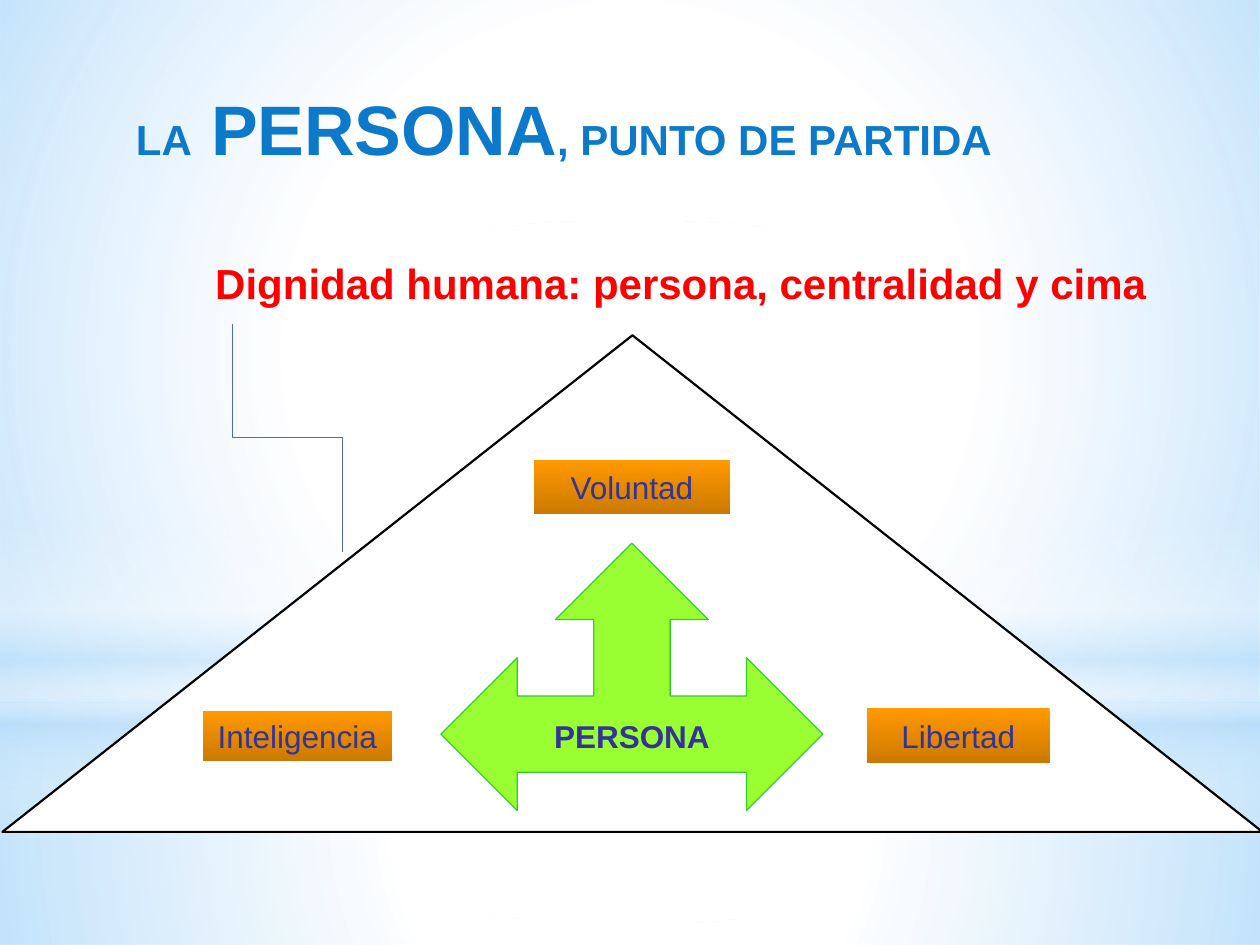
from typing import NamedTuple

from lxml.etree import SubElement
from pptx import Presentation
from pptx.dml.color import RGBColor
from pptx.enum.shapes import MSO_CONNECTOR as Connector, MSO_SHAPE as Preset
from pptx.enum.text import MSO_ANCHOR as Anchor, PP_ALIGN as Align
from pptx.oxml.ns import qn
from pptx.util import Cm, Pt

WHITE = RGBColor(0xFF, 0xFF, 0xFF)
BLACK = RGBColor(0x00, 0x00, 0x00)
SKY = RGBColor(0xB4, 0xDC, 0xFA)
ORANGE = RGBColor(0xFF, 0x99, 0x00)
DARK_ORANGE = RGBColor(0xCC, 0x79, 0x00)
LIME = RGBColor(0x99, 0xFF, 0x33)
GREEN = RGBColor(0x33, 0xCC, 0x33)
INDIGO = RGBColor(0x33, 0x33, 0x99)
BLUE = RGBColor(0x0D, 0x79, 0xCA)
RED = RGBColor(0xFF, 0x00, 0x00)
CONNECTOR_BLUE = RGBColor(0x4E, 0x67, 0xC8)
FONT = "Arial"


class Box(NamedTuple):
    left: float
    top: float
    width: float
    height: float

    def lengths(self) -> tuple:
        return tuple(Cm(value) for value in self)


class Stop(NamedTuple):
    position: int
    color: RGBColor
    opacity: int = 100


class Glow(NamedTuple):
    preset: Preset
    box: Box
    stops: tuple
    radial: bool = True


class Label(NamedTuple):
    text: str
    box: Box


class Piece(NamedTuple):
    text: str
    size: int
    color: RGBColor
    bold: bool = True


GLOWS = (
    Glow(Preset.RECTANGLE, Box(0, 14.17, 25.4, 4.88),
         (Stop(0, WHITE, 91), Stop(37, WHITE, 76), Stop(100, SKY, 79))),
    Glow(Preset.RECTANGLE, Box(0, 0, 25.4, 14.17),
         (Stop(0, WHITE, 89), Stop(48, WHITE, 62), Stop(100, SKY, 79))),
    Glow(Preset.RECTANGLE, Box(0, 10.46, 25.4, 6.35),
         (Stop(0, WHITE, 0), Stop(29, WHITE, 30), Stop(45, SKY, 40),
          Stop(55, WHITE, 26), Stop(65, SKY, 60), Stop(100, WHITE, 0)), False),
    Glow(Preset.OVAL, Box(0, 4.45, 25.4, 14.17),
         (Stop(0, WHITE), Stop(56, WHITE, 0))),
)
LABELS = (
    Label("Inteligencia", Box(4.09, 14.33, 3.81, 1.02)),
    Label("Voluntad", Box(10.77, 9.27, 3.94, 1.1)),
    Label("Libertad", Box(17.48, 14.28, 3.68, 1.1)),
)
ORANGE_FADE = (Stop(0, ORANGE), Stop(100, DARK_ORANGE))
ARROW_UNIT = 0.77
ARROW_HALF = ((-2, 2), (-1, 2), (-1, 4), (-3, 4), (-3, 3), (-5, 5),
              (-3, 7), (-3, 6))


def fill_gradient(shape, stops: tuple, radial: bool) -> None:
    shape.fill.background()
    properties = shape.element.spPr
    empty_fill = properties.find(qn("a:noFill"))
    gradient = SubElement(properties, qn("a:gradFill"), rotWithShape="1")
    properties.replace(empty_fill, gradient)
    stop_list = SubElement(gradient, qn("a:gsLst"))
    for stop in stops:
        entry = SubElement(stop_list, qn("a:gs"), pos=str(stop.position * 1000))
        color = SubElement(entry, qn("a:srgbClr"), val=str(stop.color))
        if stop.opacity < 100:
            SubElement(color, qn("a:alpha"), val=str(stop.opacity * 1000))
    if radial:
        path = SubElement(gradient, qn("a:path"), path="circle")
        SubElement(path, qn("a:fillToRect"),
                   dict.fromkeys(("l", "t", "r", "b"), "50000"))
    else:
        SubElement(gradient, qn("a:lin"), ang="5400000", scaled="0")


def write_pieces(paragraph, pieces: tuple) -> None:
    for piece in pieces:
        run = paragraph.add_run()
        run.text = piece.text
        run.font.name = FONT
        run.font.size = Pt(piece.size)
        run.font.bold = piece.bold
        run.font.color.rgb = piece.color


def write_centered(shape, piece: Piece) -> None:
    frame = shape.text_frame
    frame.word_wrap = False
    frame.vertical_anchor = Anchor.MIDDLE
    frame.paragraphs[0].alignment = Align.CENTER
    write_pieces(frame.paragraphs[0], (piece,))


def add_gradient_shape(slide, glow: Glow):
    shape = slide.shapes.add_shape(glow.preset, *glow.box.lengths())
    shape.shadow.inherit = False
    fill_gradient(shape, glow.stops, glow.radial)
    shape.line.fill.background()
    return shape


def style_outline(shape, fill: RGBColor, line: RGBColor, width: float) -> None:
    shape.shadow.inherit = False
    shape.fill.solid()
    shape.fill.fore_color.rgb = fill
    shape.line.color.rgb = line
    shape.line.width = Pt(width)


def add_triangle(slide) -> None:
    box = Box(0.05, 6.76, 25.4, 10.01)
    triangle = slide.shapes.add_shape(Preset.ISOSCELES_TRIANGLE, *box.lengths())
    style_outline(triangle, WHITE, BLACK, 1.25)


def add_three_way_arrow(slide) -> None:
    mirrored = tuple((-x, y) for x, y in reversed(ARROW_HALF))
    builder = slide.shapes.build_freeform(0, 0, scale=float(Cm(ARROW_UNIT)))
    builder.add_line_segments(ARROW_HALF + mirrored, close=True)
    arrow = builder.convert_to_shape(Cm(12.74), Cm(10.95))
    style_outline(arrow, LIME, GREEN, 0.75)
    arrow.text_frame.margin_top = Cm(2.5)
    write_centered(arrow, Piece("PERSONA", 18, INDIGO))


def add_text(slide, box: Box, pieces: tuple, spacing: float = 1.0) -> None:
    frame = slide.shapes.add_textbox(*box.lengths()).text_frame
    frame.word_wrap = True
    frame.margin_top = Cm(0.27)
    frame.paragraphs[0].line_spacing = spacing
    write_pieces(frame.paragraphs[0], pieces)


def add_bent_connector(slide) -> None:
    left, top, right, bottom = Cm(3.5), Cm(7.72), Cm(8.1), Cm(9.93)
    connector = slide.shapes.add_connector(
        Connector.ELBOW, right, top, left, bottom)
    connector.line.color.rgb = CONNECTOR_BLUE
    connector.line.width = Pt(0.75)
    properties = connector._element.spPr
    properties.find(qn("a:xfrm")).set("rot", str(270 * 60000))
    SubElement(properties, qn("a:effectLst"))


def main() -> None:
    presentation = Presentation()
    presentation.slide_width = Cm(25.4)
    presentation.slide_height = Cm(19.05)
    slide = presentation.slides.add_slide(presentation.slide_layouts[6])
    slide.background.fill.solid()
    slide.background.fill.fore_color.rgb = WHITE

    for glow in GLOWS:
        add_gradient_shape(slide, glow)
    add_triangle(slide)
    add_three_way_arrow(slide)
    for label in LABELS:
        shape = add_gradient_shape(
            slide, Glow(Preset.RECTANGLE, label.box, ORANGE_FADE, False))
        write_centered(shape, Piece(label.text, 18, INDIGO, False))
    add_text(slide, Box(4.09, 5.11, 19.81, 1.6),
             (Piece("Dignidad humana: persona, centralidad y cima", 24, RED),),
             0.8)
    add_bent_connector(slide)
    add_text(slide, Box(2.49, 1.45, 20.4, 1.96),
             (Piece("LA", 24, BLUE), Piece(" PERSONA", 40, BLUE),
              Piece(", PUNTO DE PARTIDA", 24, BLUE)))
    presentation.save("out.pptx")


if __name__ == "__main__":
    main()
